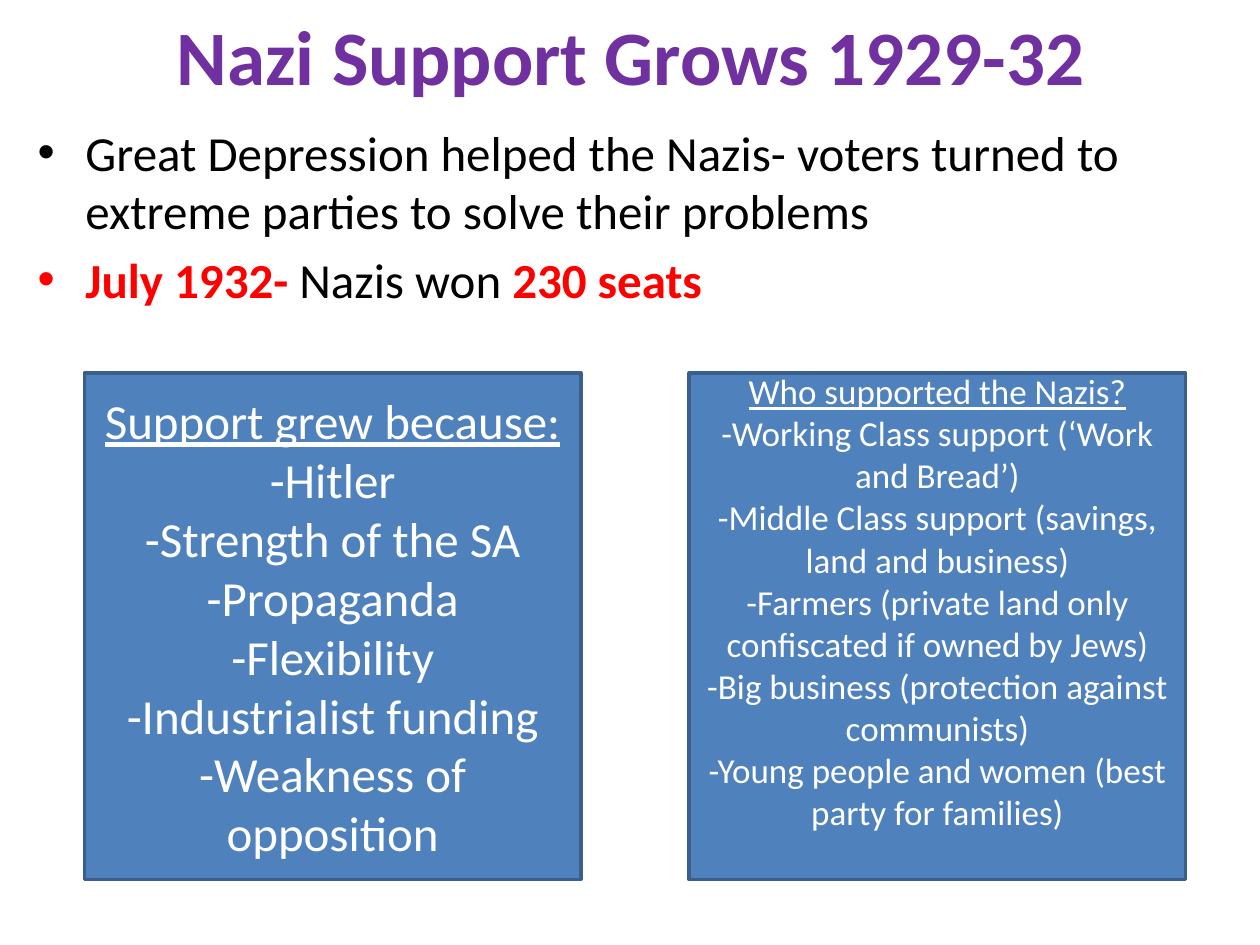
"""Build the slide on the growth of Nazi support, 1929-32."""
from lxml import etree
from pptx import Presentation
from pptx import util as u
from pptx.dml.color import RGBColor
from pptx.enum import shapes, text
from pptx.oxml.ns import qn

PURPLE = RGBColor(0x70, 0x30, 0xA0)
RED = RGBColor(0xFF, 0x00, 0x00)
BLACK = RGBColor(0x00, 0x00, 0x00)
WHITE = RGBColor(0xFF, 0xFF, 0xFF)
BLUE = RGBColor(0x4F, 0x81, 0xBD)
DARK_BLUE = RGBColor(0x3A, 0x5F, 0x8C)


def add_run(p, words, color, **formats):
    r = p.add_run()
    r.text = words
    r.font.color.rgb = color
    for name, value in {"name": "Calibri", **formats}.items():
        setattr(r.font, name, value)


def place(sp, left, top, width, height):
    box = {"left": left, "top": top, "width": width, "height": height}
    for name, value in box.items():
        setattr(sp, name, u.Inches(value))


prs = Presentation()
prs.slide_width, prs.slide_height = u.Inches(10), u.Inches(7.5)
s = prs.slides.add_slide(prs.slide_layouts[5])

title = s.shapes.title
place(title, 0.51, -0.19, 9, 1.25)
title.text_frame.vertical_anchor = text.MSO_ANCHOR.MIDDLE
p = title.text_frame.paragraphs[0]
p.alignment = text.PP_ALIGN.CENTER
add_run(p, "Nazi Support Grows 1929-32", PURPLE, size=u.Pt(44), bold=True)

bullets = [
    [("Great Depression helped the Nazis- voters turned to extreme parties "
      "to solve their problems", BLACK, False)],
    [("July 1932- ", RED, True), ("Nazis won ", BLACK, False), ("230 seats", RED, True)],
]
body = s.shapes.add_textbox(0, 0, 0, 0)
place(body, 0.2, 0.92, 9.45, 4.95)
tf = body.text_frame
tf.word_wrap = True
for i, runs in enumerate(bullets):
    p = tf.add_paragraph() if i else tf.paragraphs[0]
    p.space_before = u.Pt(5.6)
    pPr = p._p.get_or_add_pPr()
    pPr.set("marL", str(u.Inches(0.38)))
    pPr.set("indent", str(u.Inches(-0.38)))
    etree.SubElement(pPr, qn("a:buFont")).set("typeface", "Arial")
    etree.SubElement(pPr, qn("a:buChar")).set("char", "•")
    for words, color, bold in runs:
        add_run(p, words, color, size=u.Pt(28), bold=bold)

panels = [
    (0.67, 28, 0.05, 0.05, [
        "Support grew because:",
        "-Hitler",
        "-Strength of the SA",
        "-Propaganda",
        "-Flexibility",
        "-Industrialist funding",
        "-Weakness of opposition",
    ]),
    (5.47, 20, 0, 0.4, [
        "Who supported the Nazis?",
        "-Working Class support (‘Work and Bread’)",
        "-Middle Class support (savings, land and business)",
        "-Farmers (private land only confiscated if owned by Jews)",
        "-Big business (protection against communists)",
        "-Young people and women (best party for families)",
    ]),
]
for left, size, inset_top, inset_bottom, lines in panels:
    sp = s.shapes.add_shape(shapes.MSO_SHAPE.RECTANGLE, 0, 0, 0, 0)
    place(sp, left, 2.96, 3.94, 4.02)
    sp.shadow.inherit = False
    sp.fill.solid()
    sp.fill.fore_color.rgb = BLUE
    sp.line.color.rgb = DARK_BLUE
    sp.line.width = u.Pt(2)
    tf = sp.text_frame
    formats = {
        "word_wrap": True,
        "vertical_anchor": text.MSO_ANCHOR.MIDDLE,
        "margin_top": u.Inches(inset_top),
        "margin_bottom": u.Inches(inset_bottom),
    }
    for name, value in formats.items():
        setattr(tf, name, value)
    for i, line in enumerate(lines):
        p = tf.add_paragraph() if i else tf.paragraphs[0]
        p.alignment = text.PP_ALIGN.CENTER
        add_run(p, line, WHITE, size=u.Pt(size), underline=i == 0)

prs.save("out.pptx")
